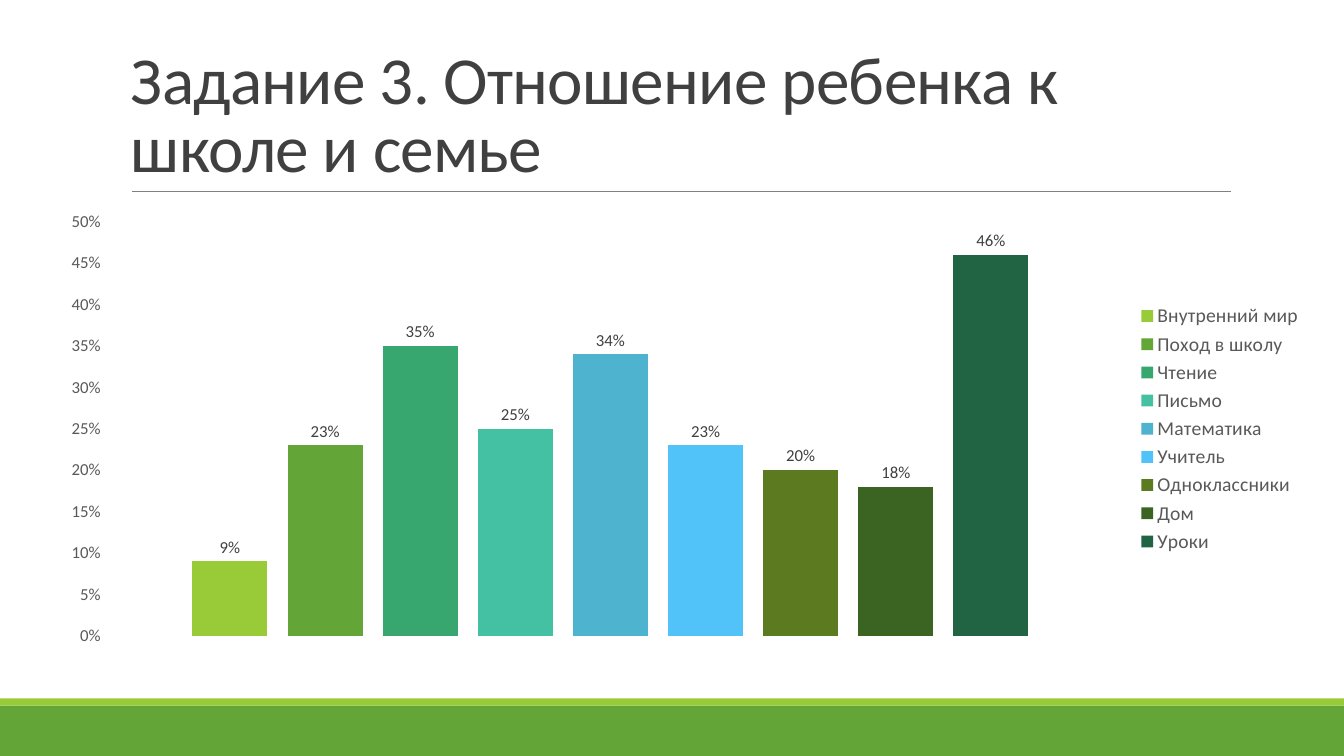
import dataclasses

import lxml.etree
import pptx
import pptx.chart.data
import pptx.dml.color
import pptx.enum.chart
import pptx.enum.shapes
import pptx.enum.text
import pptx.oxml
import pptx.oxml.ns
import pptx.util

Cm = pptx.util.Cm
Pt = pptx.util.Pt
qn = pptx.oxml.ns.qn


@dataclasses.dataclass(frozen=True)
class Theme:
    font: str = "Calibri"
    band: str = "63A537"
    strip: str = "99CB38"
    rule: str = "808080"
    dark: str = "404040"
    muted: str = "595959"
    title_size: float = 48
    legend_size: float = 14
    label_size: float = 12


THEME = Theme()

TITLE = "Задание 3. Отношение ребенка к школе и семье"
ATTITUDES = [
    ("Внутренний мир", 0.09, "99CB38"),
    ("Поход в школу", 0.23, "63A537"),
    ("Чтение", 0.35, "37A76F"),
    ("Письмо", 0.25, "44C1A3"),
    ("Математика", 0.34, "4EB3CF"),
    ("Учитель", 0.23, "51C3F9"),
    ("Одноклассники", 0.2, "5C7B20"),
    ("Дом", 0.18, "3B6321"),
    ("Уроки", 0.46, "216443"),
]
# Plot area as fractions of the chart frame
PLOT_AREA = {"x": 0.05, "y": 0.04, "w": 0.79, "h": 0.92}


def rgb(value):
    return pptx.dml.color.RGBColor.from_string(value)


def set_font(font, size, color):
    font.name = THEME.font
    font.size = Pt(size)
    font.color.rgb = rgb(color)


def add_footer(slide, x, y, w, h):
    """Green band with a thin lighter strip along its top."""
    strip_h = 0.18
    bars = [(y + strip_h, h - strip_h, THEME.band), (y, strip_h, THEME.strip)]
    for top, height, color in bars:
        sp = slide.shapes.add_shape(
            pptx.enum.shapes.MSO_SHAPE.RECTANGLE, Cm(x), Cm(top), Cm(w), Cm(height))
        sp.shadow.inherit = False
        sp.fill.solid()
        sp.fill.fore_color.rgb = rgb(color)
        sp.line.fill.background()


def add_title(slide, x, y, w, h):
    """Bottom-anchored heading with a rule under it."""
    inset = 0.28
    rule = slide.shapes.add_connector(
        pptx.enum.shapes.MSO_CONNECTOR.STRAIGHT,
        Cm(x + inset), Cm(y + h), Cm(x + w + 0.02), Cm(y + h))
    rule.line.color.rgb = rgb(THEME.rule)
    rule.line.width = Pt(0.5)
    lxml.etree.SubElement(rule._element.spPr, qn("a:effectLst"))

    tf = slide.shapes.add_textbox(Cm(x), Cm(y), Cm(w), Cm(h)).text_frame
    tf.word_wrap = True
    tf.vertical_anchor = pptx.enum.text.MSO_ANCHOR.BOTTOM
    p = tf.paragraphs[0]
    p.line_spacing = 0.85
    set_font(p.font, THEME.title_size, THEME.dark)
    r = p.add_run()
    r.text = TITLE
    r._r.get_or_add_rPr().set("spc", "-50")  # letter spacing


def set_plot_area(chart, fractions):
    """Fix the inner plot area inside the chart frame."""
    area = chart._chartSpace.find(".//" + qn("c:plotArea"))
    for old in area.findall(qn("c:layout")):
        area.remove(old)
    layout = pptx.oxml.parse_xml(
        f"<c:layout {pptx.oxml.ns.nsdecls('c')}><c:manualLayout/></c:layout>")
    settings = {"layoutTarget": "inner", "xMode": "edge", "yMode": "edge", **fractions}
    for name, value in settings.items():
        lxml.etree.SubElement(layout[0], qn(f"c:{name}")).set("val", str(value))
    area.insert(0, layout)


def add_attitude_chart(slide, x, y, w, h):
    """Clustered columns, one series per attitude."""
    data = pptx.chart.data.CategoryChartData(number_format="0%")
    data.categories = ["1"]
    for name, value, _ in ATTITUDES:
        data.add_series(name, [value])
    chart = slide.shapes.add_chart(
        pptx.enum.chart.XL_CHART_TYPE.COLUMN_CLUSTERED,
        Cm(x), Cm(y), Cm(w), Cm(h), data).chart
    chart.has_title = False
    set_font(chart.font, THEME.label_size, THEME.muted)
    set_plot_area(chart, PLOT_AREA)

    # Columns and value labels
    plot = chart.plots[0]
    plot.vary_by_categories = False
    plot.gap_width = 219
    plot.overlap = -27
    for series, (_, _, color) in zip(plot.series, ATTITUDES):
        series.format.fill.solid()
        series.format.fill.fore_color.rgb = rgb(color)
        labels = series.data_labels
        labels.show_value = True
        labels.position = pptx.enum.chart.XL_LABEL_POSITION.OUTSIDE_END
        labels.number_format = "0%"
        labels.number_format_is_linked = False
        set_font(labels.font, THEME.label_size, THEME.dark)

    # Axes
    chart.category_axis.visible = False
    axis = chart.value_axis
    axis.minimum_scale = 0
    axis.maximum_scale = 0.5
    axis.major_unit = 0.05
    axis.has_major_gridlines = False
    axis.format.line.fill.background()
    axis.tick_labels.number_format = "0%"
    axis.tick_labels.number_format_is_linked = False
    set_font(axis.tick_labels.font, THEME.label_size, THEME.muted)

    # Legend
    chart.has_legend = True
    chart.legend.position = pptx.enum.chart.XL_LEGEND_POSITION.RIGHT
    chart.legend.include_in_layout = False
    set_font(chart.legend.font, THEME.legend_size, THEME.muted)


def main():
    prs = pptx.Presentation()
    prs.slide_width = Cm(33.87)
    prs.slide_height = Cm(19.05)
    slide = prs.slides.add_slide(prs.slide_layouts[6])
    add_footer(slide, 0, 17.6, 33.87, 1.45)
    add_title(slide, 3.05, 0.79, 27.94, 4.03)
    add_attitude_chart(slide, 1.19, 5.13, 31.9, 11.35)
    prs.save("out.pptx")


if __name__ == "__main__":
    main()
